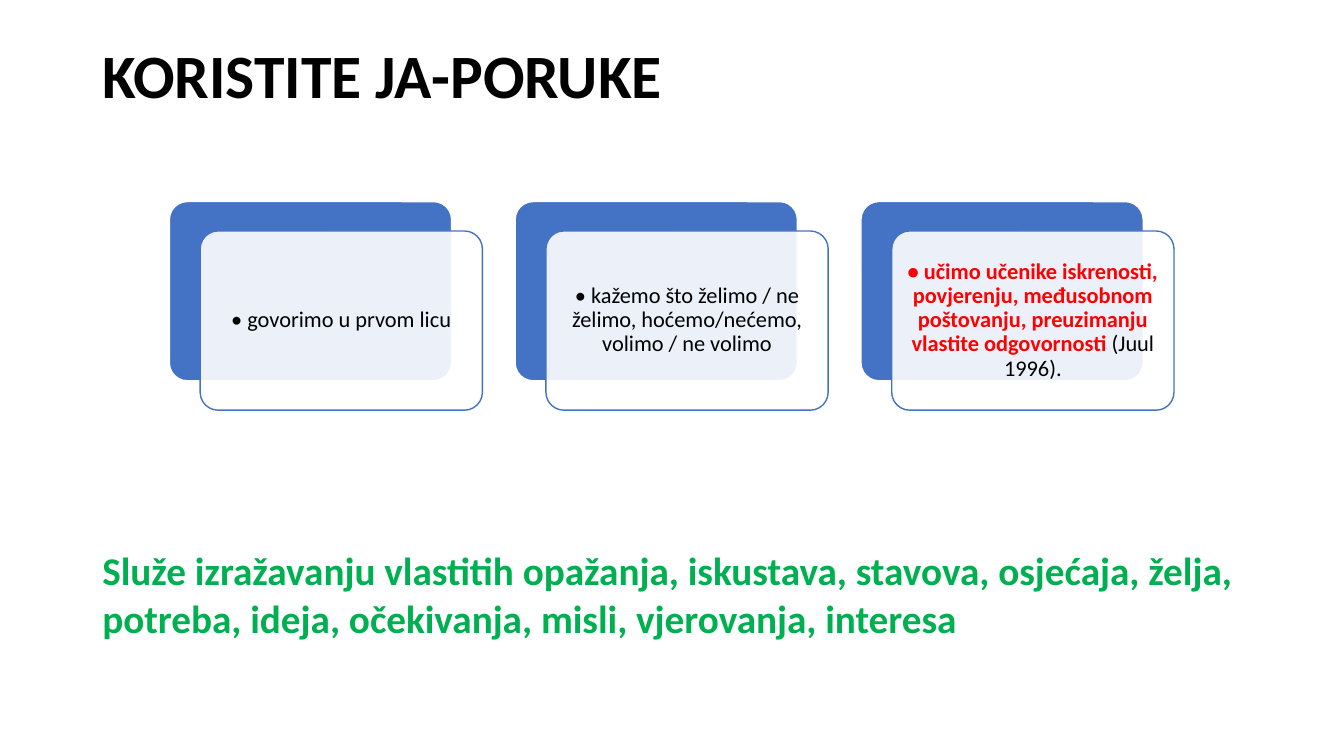
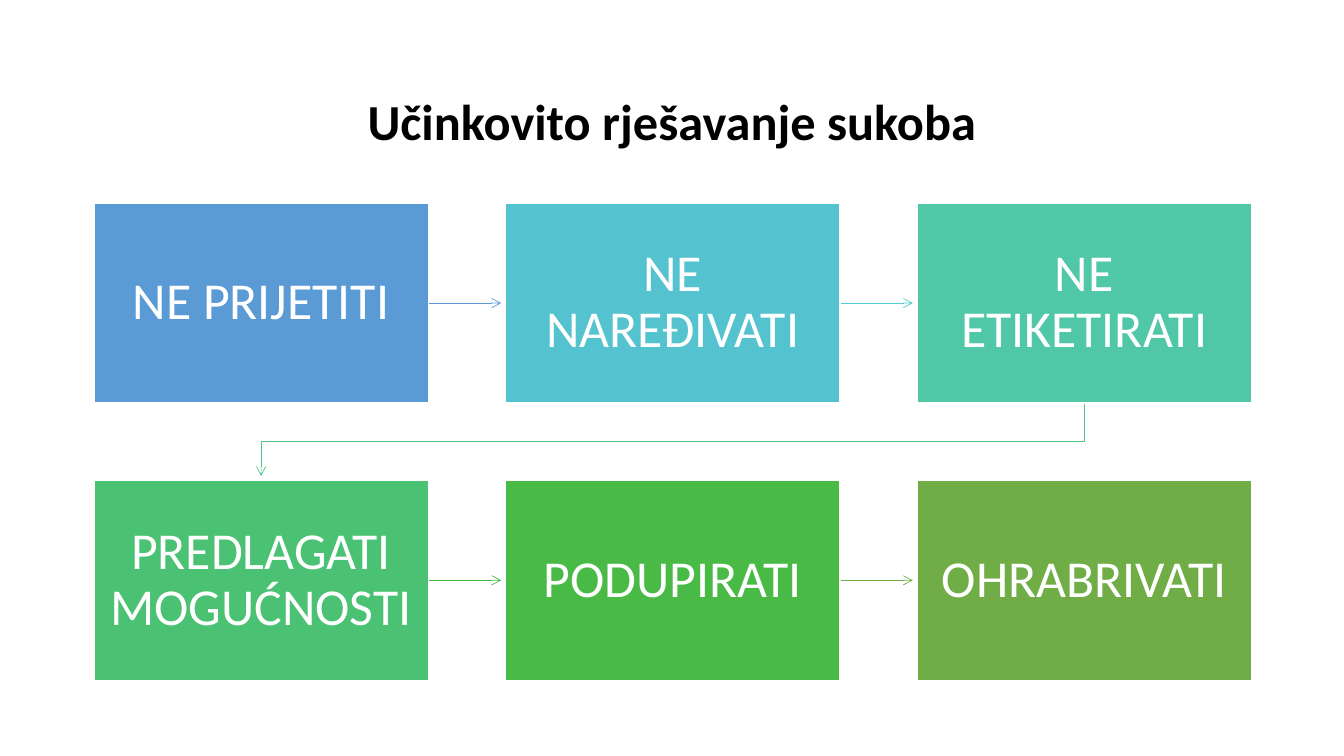
from lxml.etree import SubElement
from pptx import Presentation
from pptx.dml.color import RGBColor
from pptx.enum.shapes import MSO_CONNECTOR as Connector, MSO_SHAPE as Preset
from pptx.enum.text import MSO_ANCHOR as Anchor, PP_ALIGN as Align
from pptx.oxml.ns import qn
from pptx.util import Pt

BLACK = RGBColor(0x00, 0x00, 0x00)
WHITE = RGBColor(0xFF, 0xFF, 0xFF)
RED = RGBColor(0xFF, 0x00, 0x00)
GREEN = RGBColor(0x00, 0xB0, 0x50)
BLUE = RGBColor(0x44, 0x72, 0xC4)
SKY = RGBColor(0x5B, 0x9B, 0xD5)
CYAN = RGBColor(0x55, 0xC3, 0xCF)
TURQUOISE = RGBColor(0x54, 0xCC, 0xCD)
TEAL = RGBColor(0x50, 0xC8, 0xA7)
MINT = RGBColor(0x4D, 0xC5, 0x8D)
EMERALD = RGBColor(0x4B, 0xC1, 0x74)
LEAF = RGBColor(0x48, 0xBB, 0x4F)
GRASS = RGBColor(0x4A, 0xBA, 0x46)
OLIVE = RGBColor(0x70, 0xAD, 0x47)

MARGIN, CONTENT_WIDTH = 66, 828


class Deck:
    font = "Calibri"
    line_spacing = 0.9

    def __init__(self):
        self.presentation = Presentation()
        self.presentation.slide_width = Pt(960)
        self.presentation.slide_height = Pt(540)
        self.slide = None

    def new_slide(self):
        blank = self.presentation.slide_layouts[6]
        self.slide = self.presentation.slides.add_slide(blank)

    def fill_text(self, shape, runs, size, align=Align.LEFT, anchor=Anchor.MIDDLE,
                  inset=(7.2, 3.6), spacing=line_spacing):
        """Fill a shape with one paragraph of (text, colour, bold) runs."""
        across, down = (Pt(length) for length in inset)
        frame_format = {
            "word_wrap": True, "vertical_anchor": anchor,
            "margin_left": across, "margin_right": across,
            "margin_top": down, "margin_bottom": down,
        }
        for name, value in frame_format.items():
            setattr(shape.text_frame, name, value)
        paragraph = shape.text_frame.paragraphs[0]
        paragraph.alignment, paragraph.line_spacing = align, spacing
        for text, colour, bold in runs:
            run = paragraph.add_run()
            run.text = text
            run_format = {"name": self.font, "size": Pt(size), "bold": bold}
            for name, value in run_format.items():
                setattr(run.font, name, value)
            run.font.color.rgb = colour

    def text(self, top, height, text, colour, size, **layout):
        """Add a bold text box across the content width."""
        box = self.slide.shapes.add_textbox(
            Pt(MARGIN), Pt(top), Pt(CONTENT_WIDTH), Pt(height))
        self.fill_text(box, [(text, colour, True)], size, **layout)

    def panel(self, preset, left, top, width, height, fill, line):
        shape = self.slide.shapes.add_shape(
            preset, Pt(left), Pt(top), Pt(width), Pt(height))
        shape.shadow.inherit = False
        shape.fill.solid()
        shape.fill.fore_color.rgb = fill
        shape.line.color.rgb = line
        shape.line.width = Pt(1)
        return shape

    def card(self, left, top, runs):
        """Add a solid rounded panel with a translucent text panel over it."""
        size = (201.6, 128)
        back = self.panel(Preset.ROUNDED_RECTANGLE, left, top, *size, BLUE, WHITE)
        front = self.panel(Preset.ROUNDED_RECTANGLE, left + 22, top + 21,
                           *size, WHITE, BLUE)
        for layer in (back, front):
            layer.adjustments[0] = 0.1
        tint = front.element.spPr.find(qn("a:solidFill")).find(qn("a:srgbClr"))
        SubElement(tint, qn("a:alpha"), val="90000")
        self.fill_text(front, runs, 16, Align.CENTER, inset=(5, 5))

    def arrow(self, points, colour):
        """Draw a thin arrow: straight for two points, else a bent outline."""
        start, *rest = [(Pt(x), Pt(y)) for x, y in points]
        if len(rest) == 1:
            arrow = self.slide.shapes.add_connector(
                Connector.STRAIGHT, *start, *rest[0])
        else:
            builder = self.slide.shapes.build_freeform(*start)
            builder.add_line_segments(rest, close=False)
            arrow = builder.convert_to_shape()
            arrow.fill.background()
        arrow.line.color.rgb = colour
        arrow.line.width = Pt(0.5)
        SubElement(arrow.get_or_add_ln(), qn("a:tailEnd"), type="arrow")
        SubElement(arrow.element.spPr, qn("a:effectLst"))


def build_messages(deck):
    deck.new_slide()
    deck.text(29, 104, "KORISTITE JA-PORUKE", BLACK, 44, anchor=Anchor.TOP)
    messages = [
        [("• govorimo u prvom licu", BLACK, False)],
        [("• kažemo što želimo / ne želimo, hoćemo/nećemo, "
          "volimo / ne volimo", BLACK, False)],
        [("• učimo učenike iskrenosti, povjerenju, međusobnom poštovanju, "
          "preuzimanju vlastite odgovornosti ", RED, True),
         ("(Juul 1996).", BLACK, False)],
    ]
    for column, runs in enumerate(messages):
        deck.card(121 + 247 * column, 144, runs)
    deck.text(387, 75, "Služe izražavanju vlastitih opažanja, iskustava, stavova, "
              "osjećaja, želja, potreba, ideja, očekivanja, misli, vjerovanja, "
              "interesa", GREEN, 28, anchor=Anchor.TOP, spacing=1)


def build_conflict_steps(deck):
    deck.new_slide()
    deck.text(44, 89, "Učinkovito rješavanje sukoba", BLACK, 36,
              align=Align.CENTER)
    steps = [
        ("NE PRIJETITI", SKY, SKY),
        ("NE NAREĐIVATI", CYAN, TURQUOISE),
        ("NE ETIKETIRATI", TEAL, MINT),
        ("PREDLAGATI MOGUĆNOSTI", EMERALD, LEAF),
        ("PODUPIRATI", GRASS, OLIVE),
        ("OHRABRIVATI", OLIVE, None),
    ]
    columns, width, height, column_step, row_step = 3, 239, 143, 294, 198
    tip_gap = 3
    for index, (label, fill, arrow_colour) in enumerate(steps):
        row, column = divmod(index, columns)
        left, top = 67 + column * column_step, 145 + row * row_step
        right, bottom = left + width, top + height
        if column < columns - 1:
            middle = top + height / 2
            deck.arrow([(right, middle), (left + column_step - tip_gap, middle)],
                       arrow_colour)
        elif arrow_colour:
            center = left + width / 2
            first_center = center - column * column_step
            next_top = top + row_step
            bend = (bottom + next_top) / 2
            deck.arrow([(center, bottom), (center, bend), (first_center, bend),
                        (first_center, next_top - tip_gap)], arrow_colour)
        step = deck.panel(Preset.RECTANGLE, left, top, width, height, fill, WHITE)
        deck.fill_text(step, [(label, WHITE, False)], 37, Align.CENTER,
                       inset=(11, 12))


def main():
    deck = Deck()
    build_messages(deck)
    build_conflict_steps(deck)
    deck.presentation.save("out.pptx")


if __name__ == "__main__":
    main()
